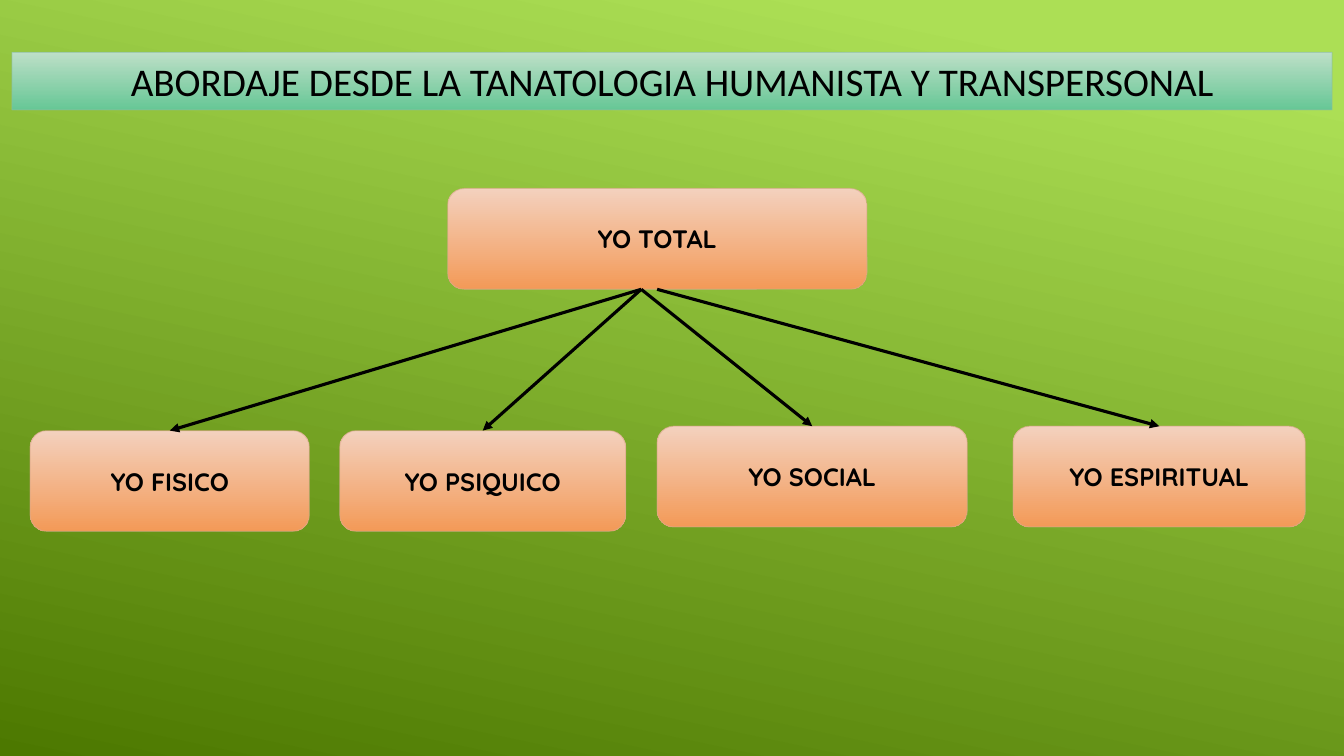
from lxml import etree
from pptx import Presentation
from pptx.dml.color import RGBColor
from pptx.enum.shapes import MSO_CONNECTOR, MSO_SHAPE
from pptx.enum.text import MSO_ANCHOR, MSO_AUTO_SIZE, PP_ALIGN
from pptx.oxml.ns import qn
from pptx.util import Cm, Pt

RECT, ROUND = MSO_SHAPE.RECTANGLE, MSO_SHAPE.ROUNDED_RECTANGLE
STRAIGHT = MSO_CONNECTOR.STRAIGHT
TOP, MIDDLE = MSO_ANCHOR.TOP, MSO_ANCHOR.MIDDLE
FIT_SHAPE = MSO_AUTO_SIZE.SHAPE_TO_FIT_TEXT
CENTER = PP_ALIGN.CENTER

# Content: lengths in cm
TITLE = "ABORDAJE DESDE LA TANATOLOGIA HUMANISTA Y TRANSPERSONAL"
TITLE_BOX = (0.3, 1.32, 33.27, 1.45)
TOTAL = "YO TOTAL"
BOX_H = 2.54
TOTAL_BOX = (11.28, 4.75, 10.57, BOX_H)
# text, left, top, width, x where its arrow starts
PARTS = [
    ("YO FISICO", 0.76, 10.85, 7.04, 16.16),
    ("YO PSIQUICO", 8.56, 10.85, 7.21, 16.16),
    ("YO SOCIAL", 16.56, 10.74, 7.82, 16.16),
    ("YO ESPIRITUAL", 25.53, 10.74, 7.37, 16.56),
]

# Formats
BACKGROUND = [(0.1, "ACDF55"), (1, "4C7800")]
GREEN = {"stops": [(0, "BDDFC7"), (1, "67C796")], "line": "8DBE9D"}
ORANGE = {"stops": [(0, "F3D1BE"), (1, "F39A58")], "line": "DAA98B"}
TITLE_FONT = {"name": "Calibri", "size": Pt(28), "bold": False}
BOX_FONT = {"name": "Quicksand", "size": Pt(18), "bold": True}
TITLE_FRAME = {"word_wrap": False, "auto_size": FIT_SHAPE, "vertical_anchor": TOP}
BOX_FRAME = {"word_wrap": True, "vertical_anchor": MIDDLE}


def color(hex_code):
    return RGBColor.from_string(hex_code)


def set_format(obj, values):
    for name, value in values.items():
        setattr(obj, name, value)


def set_gradient(fill, stops, clockwise):
    fill.gradient()
    fill.gradient_angle = 360 - clockwise
    for stop, (position, hex_code) in zip(fill.gradient_stops, stops):
        stop.position = position
        stop.color.rgb = color(hex_code)


def add_box(slide, kind, box, text, look, font, frame):
    sp = slide.shapes.add_shape(kind, *map(Cm, box))
    sp.shadow.inherit = False
    set_gradient(sp.fill, look["stops"], 90)
    sp.line.color.rgb = color(look["line"])
    sp.line.width = Pt(0.75)
    # Line at 60 % opacity
    rgb = sp.line._ln.find(".//" + qn("a:srgbClr"))
    etree.SubElement(rgb, qn("a:alpha"), val="60000")
    tf = sp.text_frame
    set_format(tf, frame)
    p = tf.paragraphs[0]
    p.alignment = CENTER
    r = p.add_run()
    r.text = text
    set_format(r.font, font)
    r.font.color.rgb = color("000000")


def add_arrow(slide, x1, y1, x2, y2):
    cx = slide.shapes.add_connector(STRAIGHT, Cm(x1), Cm(y1), Cm(x2), Cm(y2))
    cx.line.color.rgb = color("000000")
    cx.line.width = Pt(2.25)
    etree.SubElement(cx.line._ln, qn("a:tailEnd"), type="triangle")
    etree.SubElement(cx._element.spPr, qn("a:effectLst"))


def main():
    prs = Presentation()
    prs.slide_width, prs.slide_height = Cm(33.87), Cm(19.05)
    slide = prs.slides.add_slide(prs.slide_layouts[6])
    set_gradient(slide.background.fill, BACKGROUND, 102)

    # Title band and the whole
    add_box(slide, RECT, TITLE_BOX, TITLE, GREEN, TITLE_FONT, TITLE_FRAME)
    add_box(slide, ROUND, TOTAL_BOX, TOTAL, ORANGE, BOX_FONT, BOX_FRAME)

    # Parts, each with an arrow to the middle of its top edge
    start_y = TOTAL_BOX[1] + BOX_H
    for text, left, top, width, start_x in PARTS:
        box = (left, top, width, BOX_H)
        add_box(slide, ROUND, box, text, ORANGE, BOX_FONT, BOX_FRAME)
        add_arrow(slide, start_x, start_y, left + width / 2, top)

    prs.save("out.pptx")


if __name__ == "__main__":
    main()
